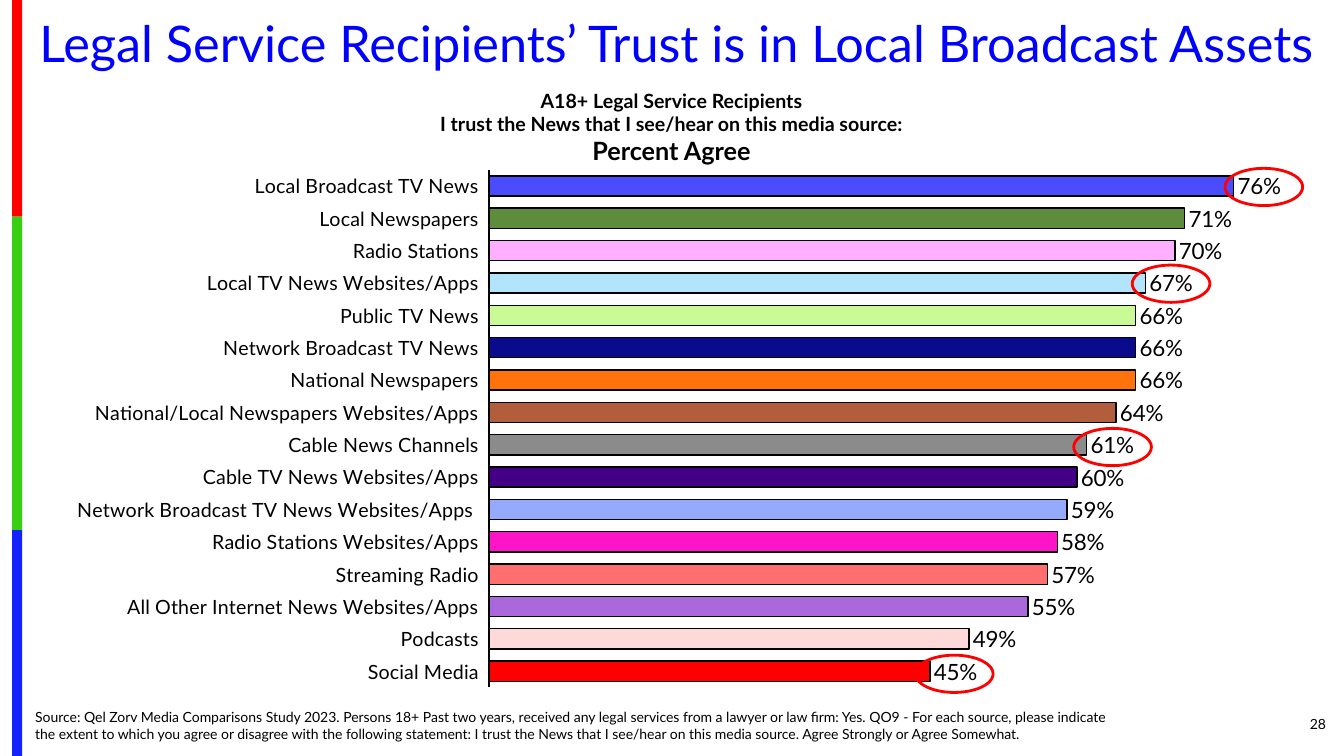
from itertools import accumulate

from lxml import etree
from pptx import Presentation
from pptx.chart.data import CategoryChartData as ChartData
from pptx.dml.color import RGBColor
from pptx.enum.chart import XL_CHART_TYPE as ChartType
from pptx.enum.chart import XL_LABEL_POSITION as LabelPosition
from pptx.enum.chart import XL_TICK_LABEL_POSITION as TickLabelPosition
from pptx.enum.chart import XL_TICK_MARK as TickMark
from pptx.enum.shapes import MSO_SHAPE as Preset
from pptx.enum.text import MSO_ANCHOR as Anchor
from pptx.enum.text import PP_ALIGN as Align
from pptx.oxml import parse_xml
from pptx.oxml.ns import nsdecls, qn
from pptx.util import Pt

EMU_PER_PX = 9144
FONT = "Lato"

BLACK = RGBColor(0x00, 0x00, 0x00)
RED = RGBColor(0xFF, 0x00, 0x00)
TITLE_BLUE = RGBColor(0x00, 0x00, 0xFF)
STRIP_RED = RGBColor(0xFE, 0x00, 0x00)
STRIP_GREEN = RGBColor(0x36, 0xCF, 0x12)
STRIP_BLUE = RGBColor(0x13, 0x22, 0xFE)
BAR_GREY = RGBColor(0xCC, 0xCC, 0xCC)

STRIP = [(215, STRIP_RED), (311, STRIP_GREEN), (224, STRIP_BLUE)]

TRUST = [
    ("Local Broadcast TV News", 0.76, RGBColor(0x4C, 0x4C, 0xFF)),
    ("Local Newspapers", 0.71, RGBColor(0x5C, 0x8C, 0x3C)),
    ("Radio Stations", 0.70, RGBColor(0xFF, 0xAF, 0xFF)),
    ("Local TV News Websites/Apps", 0.67, RGBColor(0xB2, 0xE5, 0xFC)),
    ("Public TV News", 0.66, RGBColor(0xCA, 0xFA, 0x96)),
    ("Network Broadcast TV News", 0.66, RGBColor(0x0A, 0x0A, 0x8D)),
    ("National Newspapers", 0.66, RGBColor(0xFF, 0x73, 0x0A)),
    ("National/Local Newspapers Websites/Apps", 0.64, RGBColor(0xB2, 0x5E, 0x3C)),
    ("Cable News Channels", 0.61, RGBColor(0x8B, 0x8B, 0x8B)),
    ("Cable TV News Websites/Apps", 0.60, RGBColor(0x43, 0x00, 0x86)),
    ("Network Broadcast TV News Websites/Apps ", 0.59, RGBColor(0x95, 0xA9, 0xFD)),
    ("Radio Stations Websites/Apps", 0.58, RGBColor(0xFF, 0x15, 0xC7)),
    ("Streaming Radio", 0.57, RGBColor(0xFF, 0x6F, 0x6F)),
    ("All Other Internet News Websites/Apps", 0.55, RGBColor(0xAA, 0x68, 0xDC)),
    ("Podcasts", 0.49, RGBColor(0xFF, 0xD9, 0xD9)),
    ("Social Media", 0.45, RED),
]

HIGHLIGHTS = [(1215, 167), (1123, 263), (1065, 425), (908, 650)]

PLOT_AREA = {"x": 0.35, "y": 0.02, "w": 0.64, "h": 0.98}

TITLE = "Legal Service Recipients’ Trust is in Local Broadcast Assets"
SOURCE = (
    "Source: Qel Zorv Media Comparisons Study 2023. Persons 18+ Past two years, "
    "received any legal services from a lawyer or law firm: Yes. QO9 - For each "
    "source, please indicate the extent to which you agree or disagree with the "
    "following statement: I trust the News that I see/hear on this media source. "
    "Agree Strongly or Agree Somewhat."
)
HEADING = [
    ("A18+ Legal Service Recipients", 14),
    ("I trust the News that I see/hear on this media source:", 14),
    ("Percent Agree", 18),
]


def px(*lengths):
    return [length * EMU_PER_PX for length in lengths]


def set_values(target, values):
    for name, value in values.items():
        setattr(target, name, value)


def style_font(font, size, color=BLACK, bold=False):
    set_values(font, {"name": FONT, "size": Pt(size), "bold": bold})
    font.color.rgb = color


def style_line(line, color, width):
    line.color.rgb = color
    line.width = Pt(width)


def add_text(slide, box, lines, align, color=BLACK, bold=False, spacing=None, anchor=Anchor.TOP):
    frame = slide.shapes.add_textbox(*px(*box)).text_frame
    set_values(frame, {"word_wrap": True, "vertical_anchor": anchor})
    for index, (text, size) in enumerate(lines):
        paragraph = frame.add_paragraph() if index else frame.paragraphs[0]
        set_values(paragraph, {"alignment": align, "line_spacing": spacing})
        run = paragraph.add_run()
        run.text = text
        style_font(run.font, size, color, bold)


def add_strip(slide):
    bottoms = accumulate(height for height, _ in STRIP)
    for bottom, (height, color) in zip(bottoms, STRIP):
        band = slide.shapes.add_shape(Preset.RECTANGLE, *px(12, bottom - height, 10, height))
        band.shadow.inherit = False
        band.fill.solid()
        band.fill.fore_color.rgb = color
        band.line.fill.background()


def add_highlight(slide, left, top):
    ring = slide.shapes.add_shape(Preset.OVAL, *px(left, top, 77, 37))
    ring.shadow.inherit = False
    ring.fill.background()
    style_line(ring.line, RED, 2)


def place_plot(chart):
    plot_area = chart.plots[0]._element.getparent()
    for layout in plot_area.findall(qn("c:layout")):
        plot_area.remove(layout)
    layout = parse_xml(f"<c:layout {nsdecls('c')}><c:manualLayout/></c:layout>")
    settings = {"layoutTarget": "inner", "xMode": "edge", "yMode": "edge", **PLOT_AREA}
    for tag, value in settings.items():
        etree.SubElement(layout[0], qn(f"c:{tag}")).set("val", str(value))
    plot_area.insert(0, layout)


def add_trust_chart(slide):
    names, shares, colors = zip(*TRUST)
    data = ChartData(number_format="0%")
    data.categories = names
    data.add_series("Series 1", shares)
    frame = slide.shapes.add_chart(ChartType.BAR_CLUSTERED, *px(33, 158, 1291, 525), data)
    chart = frame.chart
    set_values(chart, {"has_legend": False, "has_title": False})
    style_font(chart.font, 10)
    place_plot(chart)

    sources = chart.category_axis
    set_values(sources, {
        "reverse_order": True,
        "major_tick_mark": TickMark.NONE,
        "minor_tick_mark": TickMark.NONE,
        "tick_label_position": TickLabelPosition.LOW,
        "has_major_gridlines": False,
    })
    style_font(sources.tick_labels.font, 14)
    style_line(sources.format.line, BLACK, 1.5)
    set_values(chart.value_axis, {
        "minimum_scale": 0,
        "maximum_scale": 0.85,
        "has_major_gridlines": False,
        "visible": False,
    })

    plot = chart.plots[0]
    set_values(plot, {"gap_width": 60, "vary_by_categories": False, "has_data_labels": True})
    set_values(plot.data_labels, {
        "show_value": True,
        "number_format": "0%",
        "number_format_is_linked": False,
        "position": LabelPosition.OUTSIDE_END,
    })
    style_font(plot.data_labels.font, 16)
    bars = plot.series[0]
    bar_formats = [(bars.format, BAR_GREY)]
    bar_formats += [(bars.points[i].format, color) for i, color in enumerate(colors)]
    for bar_format, color in bar_formats:
        bar_format.fill.solid()
        bar_format.fill.fore_color.rgb = color
        style_line(bar_format.line, BLACK, 1)


def main():
    deck = Presentation()
    deck.slide_width, deck.slide_height = px(1333, 750)
    slide = deck.slides.add_slide(deck.slide_layouts[6])
    add_strip(slide)
    add_trust_chart(slide)
    add_text(slide, (17, 14, 1308, 65), [(TITLE, 36)], Align.CENTER, TITLE_BLUE, spacing=0.9)
    add_text(slide, (1025, 698, 300, 40), [("28", 10)], Align.RIGHT, anchor=Anchor.MIDDLE)
    add_text(slide, (25, 698, 1092, 61), [(SOURCE, 10)], Align.LEFT)
    add_text(slide, (187, 83, 958, 88), HEADING, Align.CENTER, bold=True)
    for left, top in HIGHLIGHTS:
        add_highlight(slide, left, top)
    deck.save("out.pptx")


if __name__ == "__main__":
    main()
